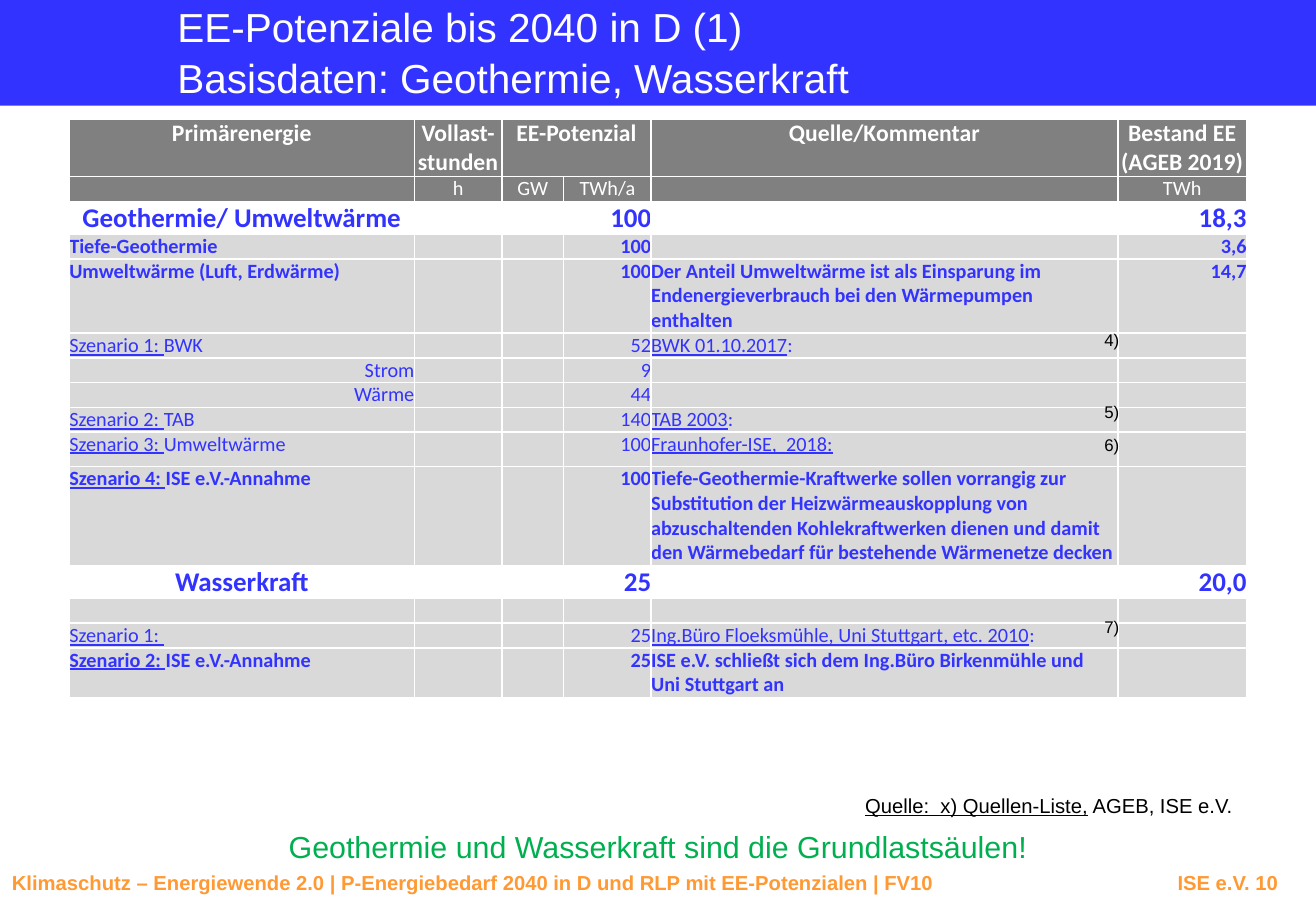
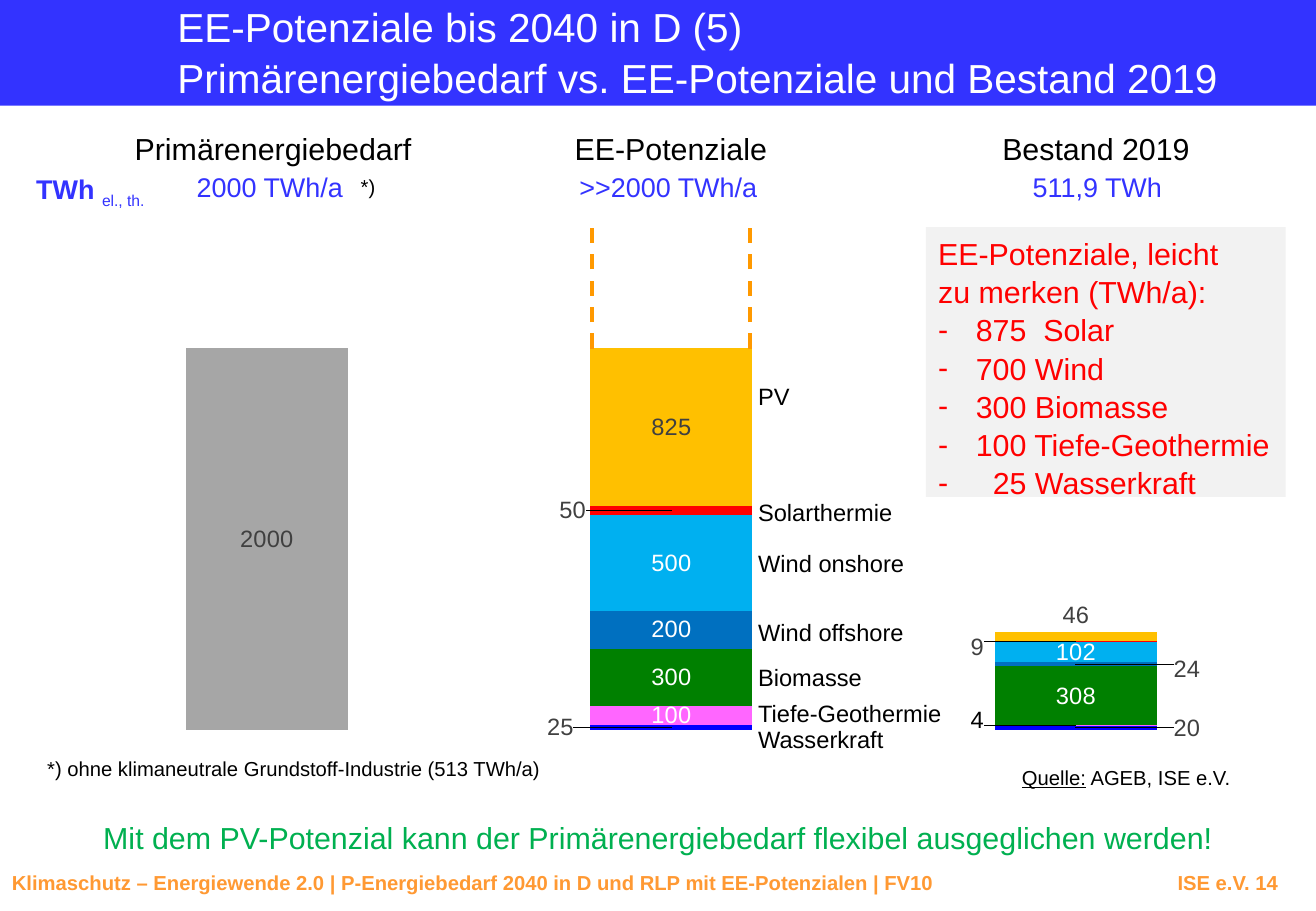
from lxml.etree import SubElement
from pptx import Presentation
from pptx.chart.data import CategoryChartData
from pptx.dml.color import RGBColor
from pptx.enum.chart import XL_CHART_TYPE as CHART
from pptx.enum.dml import MSO_LINE_DASH_STYLE as DASH
from pptx.enum.shapes import MSO_CONNECTOR, MSO_SHAPE
from pptx.enum.text import MSO_ANCHOR, MSO_AUTO_SIZE, PP_ALIGN
from pptx.oxml.ns import qn
from pptx.util import Inches, Pt

# Palette
WHITE = RGBColor(0xFF, 0xFF, 0xFF)
BLACK = RGBColor(0x00, 0x00, 0x00)
BLUE = RGBColor(0x33, 0x33, 0xFF)
ORANGE = RGBColor(0xFF, 0x99, 0x33)
DASH_ORANGE = RGBColor(0xFF, 0x99, 0x00)
GREEN = RGBColor(0x00, 0xB0, 0x50)
RED = RGBColor(0xFF, 0x00, 0x00)
HEAD_GRAY = RGBColor(0x80, 0x80, 0x80)
CELL_GRAY = RGBColor(0xD9, 0xD9, 0xD9)
NOTE_GRAY = RGBColor(0xF2, 0xF2, 0xF2)
LABEL_GRAY = RGBColor(0x40, 0x40, 0x40)
DEMAND_GRAY = RGBColor(0xA6, 0xA6, 0xA6)
HYDRO = RGBColor(0x00, 0x00, 0xFF)
GEOTHERMAL = RGBColor(0xFF, 0x66, 0xFF)
BIOMASS = RGBColor(0x00, 0x80, 0x00)
OFFSHORE = RGBColor(0x00, 0x70, 0xC0)
ONSHORE = RGBColor(0x00, 0xB0, 0xF0)
PV = RGBColor(0xFF, 0xC0, 0x00)

# Grid: square cells of a tenth of an inch
COLS, ROWS = 108.3, 75
ALIGN = {"l": PP_ALIGN.LEFT, "c": PP_ALIGN.CENTER, "r": PP_ALIGN.RIGHT}
FOOTER = ("Klimaschutz – Energiewende 2.0 | P-Energiebedarf 2040 in D und RLP "
          "mit EE-Potenzialen | FV10\tISE e.V. ")

# Table row styles: fill, alignment of the six columns, font
HEAD = (HEAD_GRAY, "cccccc", dict(size=14, bold=True, color=WHITE))
UNIT = (HEAD_GRAY, "cccccc", dict(size=12, color=WHITE))
GROUP = (WHITE, "cccrlr", dict(size=16, bold=True, color=BLUE))
BOLD = (CELL_GRAY, "lccrlr", dict(size=12, bold=True, color=BLUE))
PLAIN = (CELL_GRAY, "lccrlr", dict(size=12, color=BLUE))
SUB = (CELL_GRAY, "rccrlr", dict(size=12, color=BLUE))

COL_WIDTHS = [28.4, 7.2, 5.1, 7.2, 38.4, 10.6]
# Row: style, height, text by column
TABLE = [
    (HEAD, 4.6, {0: "Primärenergie", 1: "Vollast-\nstunden", 2: "EE-Potenzial",
                 4: "Quelle/Kommentar", 5: "Bestand EE\n(AGEB 2019)"}),
    (UNIT, 2, {1: "h", 2: "GW", 3: "TWh/a", 5: "TWh"}),
    (GROUP, 2.7, {0: "Geothermie/ Umweltwärme", 3: "100", 5: "18,3"}),
    (BOLD, 2, {0: "Tiefe-Geothermie", 3: "100", 5: "3,6"}),
    (BOLD, 6, {0: "Umweltwärme (Luft, Erdwärme)", 3: "100",
               4: "Der Anteil Umweltwärme ist als Einsparung im "
                  "Endenergieverbrauch bei den Wärmepumpen enthalten", 5: "14,7"}),
    (PLAIN, 2, {0: "_Szenario 1: _BWK", 3: "52", 4: "_BWK 01.10.2017_:"}),
    (SUB, 2, {0: "Strom", 3: "9"}),
    (SUB, 2, {0: "Wärme", 3: "44"}),
    (PLAIN, 2, {0: "_Szenario 2: _TAB", 3: "140", 4: "_TAB 2003_:"}),
    (PLAIN, 2.85, {0: "_Szenario 3: _Umweltwärme", 3: "100",
                   4: "_Fraunhofer-ISE,  2018:_"}),
    (BOLD, 8, {0: "_Szenario 4: _ISE e.V.-Annahme", 3: "100",
               4: "Tiefe-Geothermie-Kraftwerke sollen vorrangig zur Substitution der "
                  "Heizwärmeauskopplung von abzuschaltenden Kohlekraftwerken dienen und "
                  "damit den Wärmebedarf für bestehende Wärmenetze decken"}),
    (GROUP, 2.7, {0: "Wasserkraft", 3: "25", 5: "20,0"}),
    (PLAIN, 2, {}),
    (PLAIN, 2, {0: "_Szenario 1: _", 3: "25",
                4: "_Ing.Büro Floeksmühle, Uni Stuttgart, etc. 2010_:"}),
    (BOLD, 4, {0: "_Szenario 2: _ISE e.V.-Annahme", 3: "25",
               4: "ISE e.V. schließt sich dem Ing.Büro Birkenmühle und Uni "
                  "Stuttgart an"}),
]

# Series: values, fill, label colour, moved labels {point: (dx, dy, colour)}
SERIES = [
    ((2000, 25, 20), DEMAND_GRAY, LABEL_GRAY,
     {1: (-0.09, 0, LABEL_GRAY), 2: (0.09, 0, LABEL_GRAY)}),
    ((None, 100, 4), GEOTHERMAL, WHITE, {2: (-0.08, -0.01, BLACK)}),
    ((None, 300, 308), BIOMASS, WHITE, {}),
    ((None, 200, 24), OFFSHORE, WHITE, {2: (0.09, 0.01, LABEL_GRAY)}),
    ((None, 500, 102), ONSHORE, WHITE, {}),
    ((None, 50, 9), RED, LABEL_GRAY,
     {1: (-0.08, 0, LABEL_GRAY), 2: (-0.08, 0.01, LABEL_GRAY)}),
    ((None, 825, 46), PV, LABEL_GRAY, {2: (0, -0.04, LABEL_GRAY)}),
]


def grid(*cells):
    return [Inches(c / 10) for c in cells]


def set_font(font, color=BLACK, **fmt):
    values = dict(name="Arial", size=12, bold=False) | fmt
    values["size"] = Pt(values["size"])
    for key, value in values.items():
        setattr(font, key, value)
    font.color.rgb = color


def add_run(p, text, **fmt):
    r = p.add_run()
    r.text = text
    set_font(r.font, **fmt)
    return r


def write(tf, text, align="l", spacing=1.05, **fmt):
    """Lines become paragraphs; text between underscores is underlined."""
    for i, line in enumerate(text.split("\n")):
        p = tf.add_paragraph() if i else tf.paragraphs[0]
        p.alignment, p.line_spacing, p.space_before = ALIGN[align], spacing, Pt(0)
        for j, part in enumerate(line.split("_")):
            if part:
                add_run(p, part, underline=j % 2 == 1, **fmt)
    return tf.paragraphs


def set_frame(tf, inset=None, wrap=False):
    tf.word_wrap, tf.auto_size = wrap, MSO_AUTO_SIZE.NONE
    tf.vertical_anchor = MSO_ANCHOR.TOP
    if inset is not None:
        for side in ("left", "top", "right", "bottom"):
            setattr(tf, f"margin_{side}", Inches(inset))


def add_layout(parent, index, **values):
    layout = SubElement(parent, qn("c:layout"))
    manual = SubElement(layout, qn("c:manualLayout"))
    for key, value in values.items():
        SubElement(manual, qn(f"c:{key}"), val=str(value))
    parent.insert(index, layout)


class Deck:
    def __init__(self):
        self.prs = Presentation()
        self.prs.slide_width, self.prs.slide_height = grid(COLS, ROWS)

    def slide(self, title, number, layout):
        self.s = self.prs.slides.add_slide(self.prs.slide_layouts[layout])
        self.shapes = self.s.shapes
        # Title band, behind the title
        band = self.shapes.add_shape(MSO_SHAPE.RECTANGLE, *grid(0, 0, COLS, 8.7))
        band.shadow.inherit = False
        band.fill.solid()
        band.fill.fore_color.rgb = BLUE
        band.line.fill.background()
        self.shapes._spTree.insert(2, band._element)
        # Title
        sp = self.shapes.title
        sp.left, sp.top, sp.width, sp.height = grid(14.6, 0, 91.4, 8.1)
        set_frame(sp.text_frame, 0, True)
        write(sp.text_frame, title, size=24, color=WHITE)
        # Footer with a right tab
        p = self.text(FOOTER + str(number), 0, 71.1, COLS, 3, wrap=True,
                      bold=True, color=ORANGE)[0]
        tabs = SubElement(p._p.get_or_add_pPr(), qn("a:tabLst"))
        SubElement(tabs, qn("a:tab"), pos=str(Inches(10.42)), algn="r")

    def text(self, text, x, y, w, h, inset=None, wrap=False, **fmt):
        tf = self.shapes.add_textbox(*grid(x, y, w, h)).text_frame
        set_frame(tf, inset, wrap)
        return write(tf, text, **fmt)

    def message(self, text, y):
        self.text(text, 0, y, COLS, 4.4, inset=0.07, wrap=True, align="c",
                  size=18, color=GREEN)

    def table(self, x, y, widths, rows):
        heights = [height for _, height, _ in rows]
        box = grid(x, y, sum(widths), sum(heights))
        table = self.shapes.add_table(len(rows), len(widths), *box).table
        table.first_row = table.horz_banding = False
        for col, width in zip(table.columns, grid(*widths)):
            col.width = width
        for row, height, (style, _, texts) in zip(table.rows, grid(*heights), rows):
            row.height = height
            for i, cell in enumerate(row.cells):
                self.cell(cell, texts.get(i, ""), i, *style)
        table.cell(0, 2).merge(table.cell(0, 3))

    def cell(self, cell, text, column, fill, aligns, fmt):
        for side in ("left", "top", "right", "bottom"):
            setattr(cell, f"margin_{side}", 0)
        ps = write(cell.text_frame, text, aligns[column], 1.0, name="Calibri", **fmt)
        if not text:
            SubElement(ps[0]._p, qn("a:endParaRPr"), sz="1200")
        tc_pr = cell._tc.get_or_add_tcPr()
        for side in "LRTB":
            ln = SubElement(tc_pr, qn(f"a:ln{side}"), w=str(Pt(1)))
            solid = SubElement(ln, qn("a:solidFill"))
            SubElement(solid, qn("a:srgbClr"), val=str(WHITE))
        cell.fill.solid()
        cell.fill.fore_color.rgb = fill

    def stacked_chart(self, x, y, w, h, series, maximum):
        data = CategoryChartData(number_format="0")
        data.categories = ["1", "2", "3"]
        for i, (values, *_) in enumerate(series, 1):
            data.add_series(f"Series {i}", values)
        chart = self.shapes.add_chart(CHART.COLUMN_STACKED, *grid(x, y, w, h), data).chart
        chart.has_legend = chart.has_title = False
        set_font(chart.font, size=10)
        chart.category_axis.visible = chart.value_axis.visible = False
        chart.value_axis.has_major_gridlines = False
        chart.value_axis.minimum_scale, chart.value_axis.maximum_scale = 0, maximum
        plot = chart.plots[0]
        plot.gap_width, plot.overlap, plot.vary_by_categories = 150, 100, False
        area = chart._chartSpace.chart.plotArea
        for old in area.findall(qn("c:layout")):
            area.remove(old)
        add_layout(area, 0, layoutTarget="inner", xMode="edge", yMode="edge",
                   x=0.016, y=0.049, w=0.984, h=0.916)
        for ser, (_, fill, color, moved) in zip(plot.series, series):
            ser.format.fill.solid()
            ser.format.fill.fore_color.rgb = fill
            labels = ser.data_labels
            labels.show_value, labels.number_format = True, "0"
            labels.number_format_is_linked = False
            set_font(labels.font, size=14, color=color)
            for i, (dx, dy, label_color) in moved.items():
                label = ser.points[i].data_label
                set_font(label.font, size=14, color=label_color)
                add_layout(label._get_or_add_dLbl(), 1, x=dx, y=dy)
        for i in (1, 2):
            fill = plot.series[0].points[i].format.fill
            fill.solid()
            fill.fore_color.rgb = HYDRO

    def note(self, text, items, x, y, w, h):
        sp = self.s.placeholders[1]
        sp.left, sp.top, sp.width, sp.height = grid(x, y, w, h)
        sp.fill.solid()
        sp.fill.fore_color.rgb = NOTE_GRAY
        set_frame(sp.text_frame)
        lines = "\n".join([text, *items])
        first = text.count("\n") + 1
        for i, p in enumerate(write(sp.text_frame, lines, size=18, color=RED)):
            # Two-digit values are indented by one digit more
            indent = 0 if i < first else 0.31 if items[i - first][2].isdigit() else 0.45
            p_pr = p._p.get_or_add_pPr()
            p_pr.set("marL", str(Inches(indent)))
            p_pr.set("indent", str(-Inches(indent)))
            if indent:
                SubElement(p_pr, qn("a:buChar"), char="-")
            else:
                SubElement(p_pr, qn("a:buNone"))
        self.shapes._spTree.append(sp._element)

    def dashed_line(self, x, y1, y2):
        line = self.shapes.add_connector(MSO_CONNECTOR.STRAIGHT, *grid(x, y1, x, y2))
        line.line.color.rgb, line.line.width = DASH_ORANGE, Pt(2.25)
        line.line.dash_style = DASH.DASH
        SubElement(line._element.spPr, qn("a:effectLst"))


def main():
    deck = Deck()

    # Slide 1: table of base data
    deck.slide("EE-Potenziale bis 2040 in D (1)\nBasisdaten: Geothermie, Wasserkraft", 10, 5)
    deck.text("_Quelle:  x) Quellen-Liste,_ AGEB, ISE e.V.", 71.2, 65.2, 30.5, 2, inset=0)
    deck.table(5.7, 9.8, COL_WIDTHS, TABLE)
    for number, y in zip((4, 5, 6, 7), (26.6, 32.5, 35.2, 50.2)):
        deck.text(f"{number})", 89.9, y, 3.3, 2.7, size=10)
    deck.message("Geothermie und Wasserkraft sind die Grundlastsäulen!", 67.3)

    # Slide 2: demand, potential and stock
    deck.slide("EE-Potenziale bis 2040 in D (5)\n"
               "Primärenergiebedarf vs. EE-Potenziale und Bestand 2019", 14, 1)
    deck.stacked_chart(3.7, 18.7, 101.5, 42.9, SERIES, 2500)
    for head, x, w, total, total_x, total_w in (
            ("Primärenergiebedarf", 10.1, 25, "2000 TWh/a", 15.2, 14.2),
            ("EE-Potenziale", 46.3, 18, ">>2000 TWh/a", 46.7, 16.8),
            ("Bestand 2019", 81.5, 17.6, "511,9 TWh", 84, 12.8)):
        deck.text(head, x, 10.1, w, 4, size=18)
        deck.text(total, total_x, 13.4, total_w, 3.7, size=16, color=BLUE)
    unit = deck.text("TWh ", 2, 13.6, 11.6, 3.7, size=16, bold=True, color=BLUE)[0]
    sub = add_run(unit, "el., th.", size=16, color=BLUE)
    sub._r.get_or_add_rPr().set("baseline", "-25000")
    for name, y, w in (("PV", 30.8, 4.6), ("Solarthermie", 40.4, 13.1),
                       ("Wind onshore", 44.6, 14.1), ("Wind offshore", 50.3, 14.1),
                       ("Biomasse", 54, 10.6), ("Tiefe-Geothermie", 56.9, 17.2),
                       ("Wasserkraft", 59.1, 12.4)):
        deck.text(name, 61.4, y, w, 3.4, size=14)
    deck.note("EE-Potenziale, leicht\nzu merken (TWh/a):",
              ["875  Solar", "700 Wind", "300 Biomasse", "100 Tiefe-Geothermie",
               "25 Wasserkraft"], 76.2, 18.7, 29.6, 22.2)
    for x in (48.7, 61.7):
        deck.dashed_line(x, 28.7, 18.1)
    deck.text("*)", 28.7, 13.8, 3.2, 3)
    deck.text("*) ohne klimaneutrale Grundstoff-Industrie (513 TWh/a)", 2.9, 61.7, 42.9, 3)
    deck.text("_Quelle:_ AGEB, ISE e.V.", 84.1, 62.9, 17.4, 2, inset=0)
    deck.message("Mit dem PV-Potenzial kann der Primärenergiebedarf flexibel "
                 "ausgeglichen werden!", 66.6)

    deck.prs.save("out.pptx")


if __name__ == "__main__":
    main()
